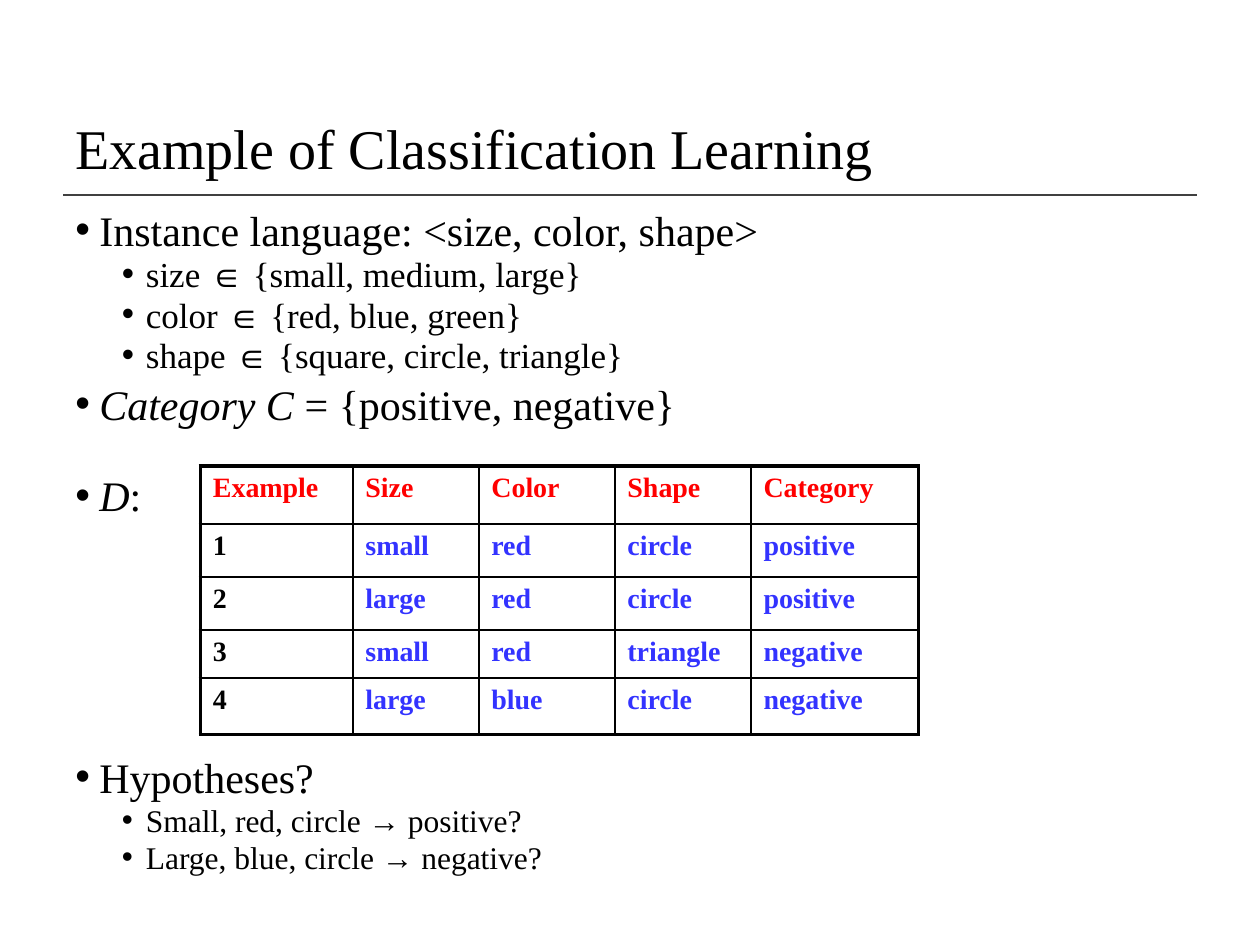
from lxml.etree import SubElement
from pptx import Presentation
from pptx.dml.color import RGBColor
from pptx.enum.shapes import MSO_CONNECTOR
from pptx.enum.text import MSO_ANCHOR
from pptx.oxml.ns import qn
from pptx.util import Inches, Pt

BLACK = RGBColor(0x00, 0x00, 0x00)
GREY = RGBColor(0x40, 0x40, 0x40)
RED = RGBColor(0xFF, 0x00, 0x00)
BLUE = RGBColor(0x33, 0x33, 0xFF)
FONT = "Times New Roman"
WIDTH, HEIGHT = 10, 7.5
THIN, THICK = 1, 2.25

# Each point: level, text size, space before, runs of (text, italic)
POINTS = [
    (0, 24, 7.5, [("Instance language: <size, color, shape>", False)]),
    (1, 20, 3.8, [("size ∈ {small, medium, large}", False)]),
    (1, 20, 3.8, [("color ∈ {red, blue, green}", False)]),
    (1, 20, 3.8, [("shape ∈ {square, circle, triangle}", False)]),
    (0, 24, 7.5, [("Category C ", True), ("= {positive, negative}", False)]),
    (0, 24, 29, [("D", True), (":", False)]),
    (0, 24, 138, [("Hypotheses?", False)]),  # leaves room for the table
    (1, 18, 3.8, [("Small, red, circle → positive?", False)]),
    (1, 18, 3.8, [("Large, blue, circle → negative?", False)]),
]

EXAMPLES = [
    ["Example", "Size", "Color", "Shape", "Category"],
    ["1", "small", "red", "circle", "positive"],
    ["2", "large", "red", "circle", "positive"],
    ["3", "small", "red", "triangle", "negative"],
    ["4", "large", "blue", "circle", "negative"],
]
COLUMN_WIDTHS = [1.21, 1, 1.08, 1.08, 1.33]
ROW_HEIGHTS = [0.46, 0.42, 0.42, 0.38, 0.45]


def add_text(paragraph, text, size, color=BLACK, bold=False, italic=False):
    run = paragraph.add_run()
    run.text = text
    font = run.font
    font.name, font.size = FONT, Pt(size)
    font.bold, font.italic = bold, italic
    font.color.rgb = color


def add_frame(slide, box, anchor):
    frame = slide.shapes.add_textbox(*map(Inches, box)).text_frame
    frame.word_wrap = True
    frame.vertical_anchor = anchor
    return frame


def add_bullet(paragraph, level):
    properties = paragraph._p.get_or_add_pPr()
    properties.set("marL", str(Inches(0.19 + 0.37 * level)))
    properties.set("indent", str(Inches(-0.19)))
    SubElement(properties, qn("a:buFont"), typeface="Arial")
    SubElement(properties, qn("a:buChar"), char="•")


def set_border(cell, side, width):
    line = SubElement(cell._tc.get_or_add_tcPr(), qn(f"a:ln{side}"), w=str(Pt(width)))
    fill = SubElement(line, qn("a:solidFill"))
    SubElement(fill, qn("a:srgbClr"), val=str(BLACK))


def build_title(slide, box):
    left, top, width, height = box
    text_box = (left, top, width * 0.96, height * 0.95)
    title = add_frame(slide, text_box, MSO_ANCHOR.MIDDLE).paragraphs[0]
    title.line_spacing = 0.9
    add_text(title, "Example of Classification Learning", size=32)

    # Rule under the title
    rule_y = Inches(top + height)
    rule = slide.shapes.add_connector(
        MSO_CONNECTOR.STRAIGHT, Inches(left), rule_y, Inches(left + width), rule_y)
    rule.line.color.rgb = GREY
    rule.line.width = Pt(1)
    SubElement(rule._element.spPr, qn("a:effectLst"))


def build_points(slide, box):
    frame = add_frame(slide, box, MSO_ANCHOR.TOP)
    for index, (level, size, space, runs) in enumerate(POINTS):
        point = frame.add_paragraph() if index else frame.paragraphs[0]
        point.level = level
        point.line_spacing = 0.8
        point.space_before = Pt(space)
        add_bullet(point, level)
        for text, italic in runs:
            add_text(point, text, size=size, italic=italic)


def build_examples(slide, box):
    last_row, last_column = len(EXAMPLES) - 1, len(EXAMPLES[0]) - 1
    table = slide.shapes.add_table(
        last_row + 1, last_column + 1, *map(Inches, box)).table
    table.first_row = table.horz_banding = False
    for column, width in zip(table.columns, COLUMN_WIDTHS):
        column.width = Inches(width)
    for row, height in zip(table.rows, ROW_HEIGHTS):
        row.height = Inches(height)

    for r, values in enumerate(EXAMPLES):
        for c, value in enumerate(values):
            cell = table.cell(r, c)
            color = RED if r == 0 else BLACK if c == 0 else BLUE
            add_text(cell.text_frame.paragraphs[0], value, size=16,
                     color=color, bold=True)
            # Thick outer frame, thin inner grid
            outer = {"L": c == 0, "R": c == last_column,
                     "T": r == 0, "B": r == last_row}
            for side, is_outer in outer.items():
                set_border(cell, side, THICK if is_outer else THIN)
            cell.fill.background()


def main():
    presentation = Presentation()
    presentation.slide_width = Inches(WIDTH)
    presentation.slide_height = Inches(HEIGHT)
    slide = presentation.slides.add_slide(presentation.slide_layouts[6])

    margin = WIDTH * 0.05
    build_title(slide, (margin, 0.88, WIDTH - 2 * margin, 0.67))
    build_points(slide, (margin, HEIGHT * 0.22, WIDTH - 2 * margin, HEIGHT * 0.75))
    build_examples(slide, (1.59, 3.7, sum(COLUMN_WIDTHS), sum(ROW_HEIGHTS)))
    presentation.save("out.pptx")


if __name__ == "__main__":
    main()
